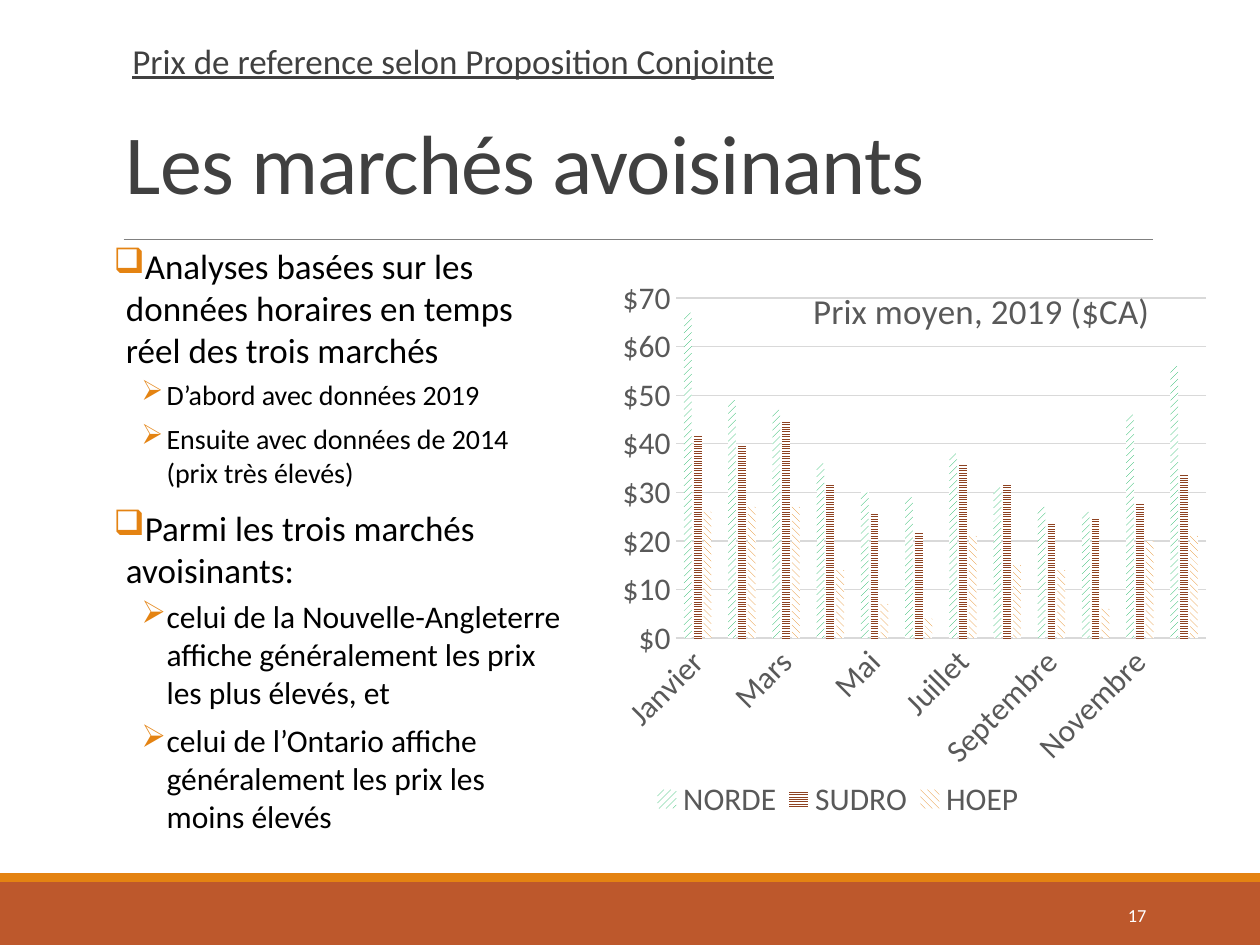
"""Build the slide on neighbouring power markets."""
from lxml import etree
from pptx import Presentation
from pptx.chart.data import CategoryChartData
from pptx.dml.color import RGBColor
from pptx.enum import chart as ch, dml, shapes, text
from pptx.oxml import parse_xml
from pptx.oxml.ns import nsdecls, qn
from pptx.util import Cm, Pt


def paint(font, size, color):
    font.name = "Calibri"
    font.size = Pt(size)
    font.bold = False
    font.color.rgb = RGBColor.from_string(color)


def place(node, spot, **sizes):
    for old in node.findall(qn("c:layout")):
        node.remove(old)
    marks = "".join(f'<c:{k} val="{v}"/>' for k, v in sizes.items())
    node.insert(spot, parse_xml(
        f'<c:layout {nsdecls("c")}><c:manualLayout>{marks}</c:manualLayout></c:layout>'))


deck = Presentation()
deck.slide_width, deck.slide_height = Cm(25.4), Cm(19.05)
slide = deck.slides.add_slide(deck.slide_layouts[6])

for top, height, color in [(17.78, 1.27, "BD582C"), (17.6, 0.18, "E48312")]:
    band = slide.shapes.add_shape(
        shapes.MSO_SHAPE.RECTANGLE, 0, Cm(top), Cm(25.4), Cm(height))
    band.shadow.inherit = False
    band.fill.solid()
    band.fill.fore_color.rgb = RGBColor.from_string(color)
    band.line.fill.background()

rule = slide.shapes.add_connector(
    shapes.MSO_CONNECTOR.STRAIGHT, Cm(2.49), Cm(4.83), Cm(23.24), Cm(4.83))
rule.line.color.rgb = RGBColor.from_string("808080")
rule.line.width = Pt(0.5)
etree.SubElement(rule._element.spPr, qn("a:effectLst"))

top, mid, low = text.MSO_ANCHOR.TOP, text.MSO_ANCHOR.MIDDLE, text.MSO_ANCHOR.BOTTOM
frames = []
for box, anchor, pad in [
    ((2.29, 0.74, 20.96, 3.66), low, 0.25),
    ((2.29, 0.76, 14.45, 1.6), top, 0),
    ((20.62, 17.93, 2.74, 1.02), mid, 0.25),
    ((2.29, 4.8, 9.17, 13.13), top, 0),
]:
    frame = slide.shapes.add_textbox(*map(Cm, box)).text_frame
    frame.word_wrap = True
    frame.vertical_anchor = anchor
    frame.margin_left = frame.margin_right = Cm(pad)
    frames.append(frame)
head, sub, num, body = frames

for frame, words, size, color in [
    (head, "Les marchés avoisinants", 48, "404040"),
    (sub, "Prix de reference selon Proposition Conjointe", 20, "404040"),
    (num, "17", 10.5, "FFFFFF"),
]:
    frame.text = words
    paint(frame.paragraphs[0].runs[0].font, size, color)
head.paragraphs[0].line_spacing = 0.85
head.paragraphs[0].runs[0].font._element.set("spc", "-50")
sub.paragraphs[0].line_spacing = 0.9
sub.paragraphs[0]._p.get_or_add_pPr().set("marL", str(Cm(0.38)))
sub.paragraphs[0].runs[0].font.underline = True
num.paragraphs[0].alignment = text.PP_ALIGN.RIGHT

levels = [("❑", 0.25, -0.25, 6, 2), ("➢", 1.07, -0.51, 2, 4)]
items = [
    (0, 20, "Analyses basées sur les données horaires en temps réel des trois marchés"),
    (1, 16, "D’abord avec données 2019"),
    (1, 16, "Ensuite avec données de 2014 \v(prix très élevés)"),
    (0, 20, "Parmi les trois marchés avoisinants:"),
    (1, 18, "celui de la Nouvelle-Angleterre affiche généralement les prix les plus élevés, et"),
    (1, 18, "celui de l’Ontario affiche généralement les prix les moins élevés"),
]
for i, (level, size, words) in enumerate(items):
    para = body.add_paragraph() if i else body.paragraphs[0]
    para.text = words
    para.level = level
    sign, left, hang, above, below = levels[level]
    para.space_before = Pt(above if i else 0)
    para.space_after = Pt(below)
    props = para._p.get_or_add_pPr()
    props.set("marL", str(Cm(left)))
    props.set("indent", str(Cm(hang)))
    tint = etree.SubElement(props, qn("a:buClr"))
    etree.SubElement(tint, qn("a:srgbClr"), val="E48312")
    etree.SubElement(props, qn("a:buChar"), char=sign)
    for run in para.runs:
        paint(run.font, size, "000000")

pattern = dml.MSO_PATTERN
series = [
    ("NORDE", [67, 49, 47, 36, 30, 29, 38, 31, 27, 26, 46, 56],
     pattern.WIDE_UPWARD_DIAGONAL, "00B050"),
    ("SUDRO", [42, 40, 45, 32, 26, 22, 36, 32, 24, 25, 28, 34],
     pattern.NARROW_HORIZONTAL, "8E4221"),
    ("HOEP", [26, 27, 27, 14, 7, 4, 21, 15, 14, 6, 20, 21],
     pattern.WIDE_DOWNWARD_DIAGONAL, "E48312"),
]
data = CategoryChartData()
data.categories = ["Janvier", "Février", "Mars", "Avril", "Mai", "Juin", "Juillet",
                   "Août", "Septembre", "Octobre", "Novembre", "Décembre"]
for name, vals, *_ in series:
    data.add_series(name, vals)
chart = slide.shapes.add_chart(
    ch.XL_CHART_TYPE.COLUMN_CLUSTERED, *map(Cm, (11.73, 4.42, 12.6, 12.24)), data).chart
paint(chart.font, 18, "000000")

plot = chart.plots[0]
plot.gap_width, plot.overlap = 219, -27
plot.vary_by_categories = False
for bars, (_, _, weave, color) in zip(plot.series, series):
    bars.format.fill.patterned()
    bars.format.fill.pattern = weave
    bars.format.fill.fore_color.rgb = RGBColor.from_string(color)
    bars.format.fill.back_color.rgb = RGBColor.from_string("FFFFFF")

months, price = chart.category_axis, chart.value_axis
for axis in (months, price):
    axis.major_tick_mark = axis.minor_tick_mark = ch.XL_TICK_MARK.NONE
    paint(axis.tick_labels.font, 18, "595959")
months._element.find(qn("c:txPr")).find(qn("a:bodyPr")).set("rot", "-2700000")
price.minimum_scale, price.maximum_scale, price.major_unit = 0, 70, 10
price.tick_labels.number_format = '"$"#,##0'
price.tick_labels.number_format_is_linked = False
price.format.line.fill.background()
for line in (months.format.line, price.major_gridlines.format.line):
    line.color.rgb = RGBColor.from_string("D9D9D9")
    line.width = Pt(0.75)

title = chart.chart_title
title.text_frame.text = "Prix moyen, 2019 ($CA)"
paint(title.text_frame.paragraphs[0].runs[0].font, 20, "595959")
title._element.find(qn("c:overlay")).set("val", "1")
place(title._element, 1, xMode="edge", yMode="edge", x=0.36, y=0.1)

chart.has_legend = True
legend = chart.legend
legend.position = ch.XL_LEGEND_POSITION.BOTTOM
legend.include_in_layout = False
paint(legend.font, 18, "595959")
place(legend._element, 1, xMode="edge", yMode="edge", x=0.1, y=0.91, w=0.62, h=0.09)
place(chart._chartSpace.chart.plotArea, 0, layoutTarget="inner", xMode="edge",
      yMode="edge", x=0.15, y=0.13, w=0.85, h=0.56)

deck.save("out.pptx")
